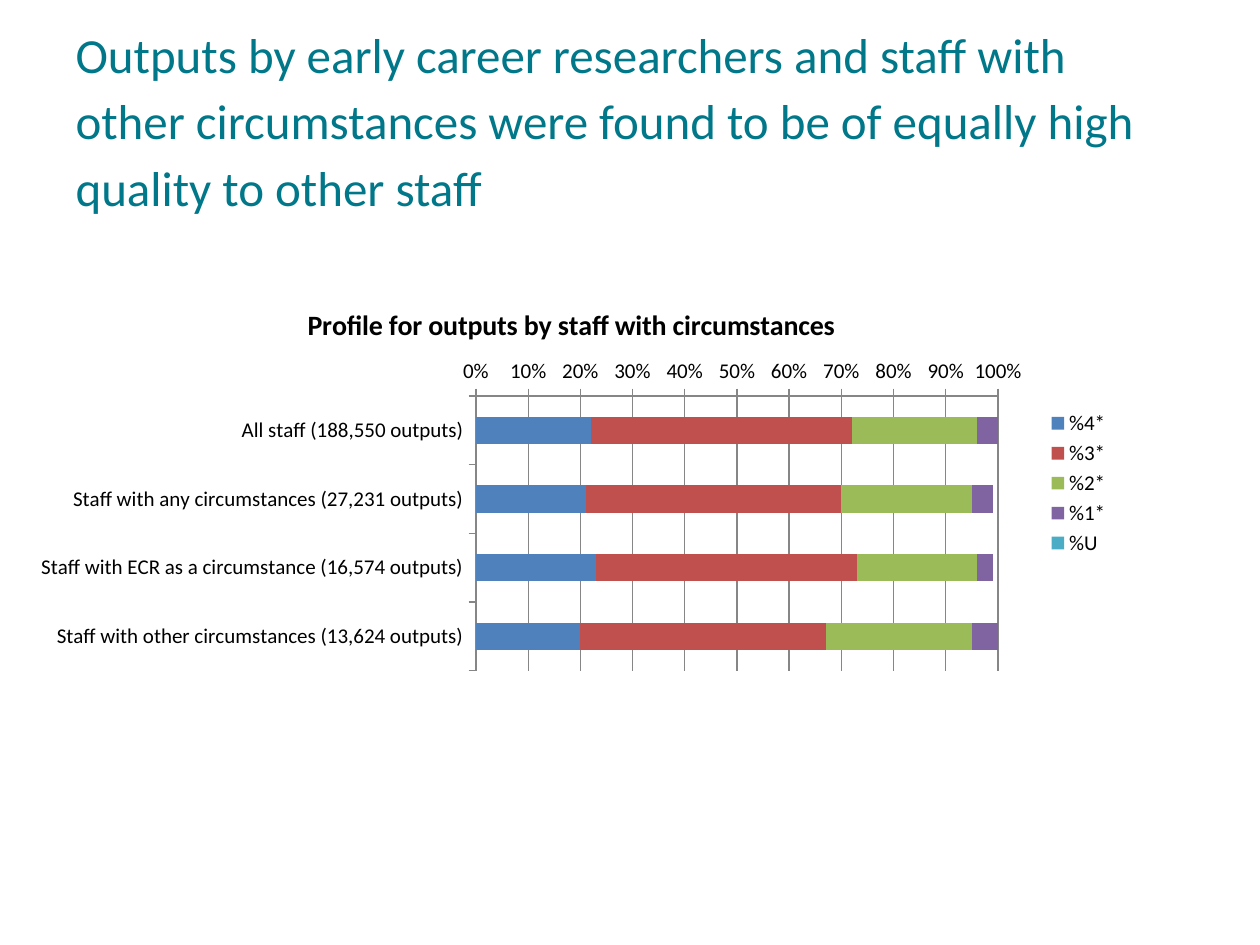
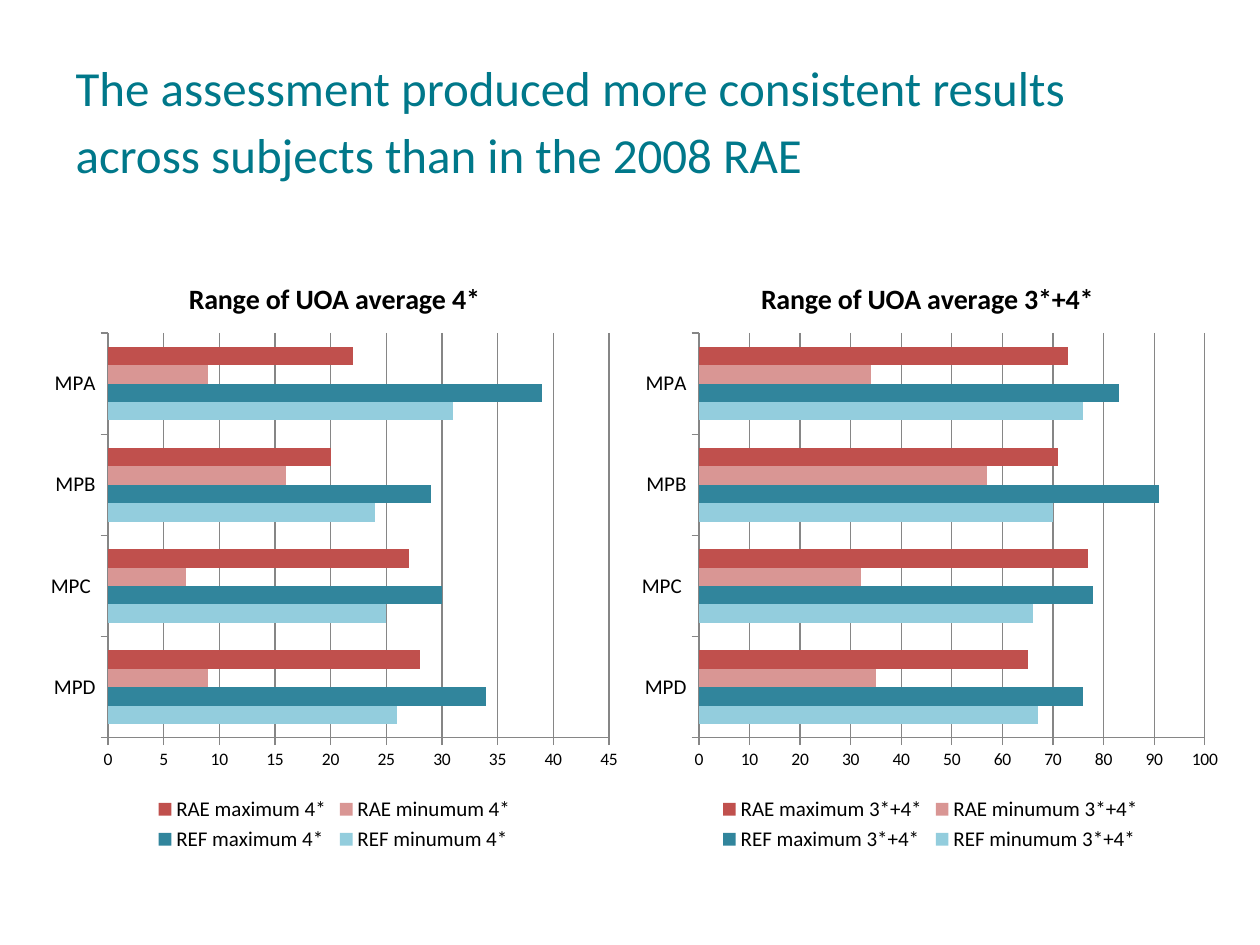
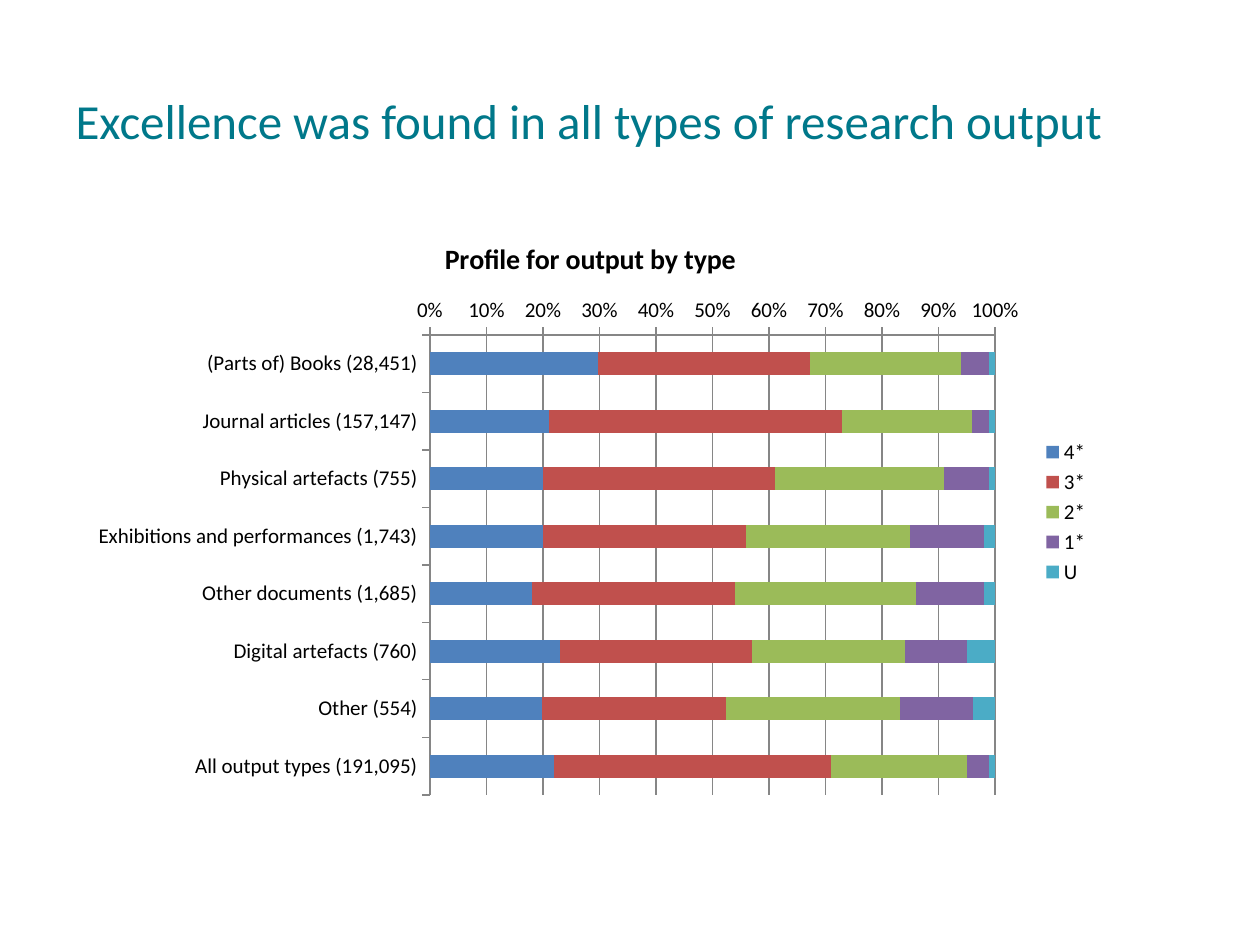
"""Build three slides of bar charts on research assessment results."""
from dataclasses import dataclass

from lxml.etree import SubElement
from pptx import Presentation
from pptx.chart.data import CategoryChartData
from pptx.dml.color import RGBColor
from pptx.enum.chart import XL_CHART_TYPE, XL_LEGEND_POSITION, XL_TICK_MARK
from pptx.enum.text import MSO_ANCHOR, PP_ALIGN
from pptx.oxml.ns import qn
from pptx.util import Pt


@dataclass(frozen=True)
class Theme:
    font: str = "Calibri"
    title_color: str = "00788A"
    text_color: str = "000000"
    line_color: str = "868686"
    profile_colors: tuple = ("4F81BD", "C0504D", "9BBB59", "8064A2", "4BACC6")
    range_colors: tuple = ("93CDDD", "31859C", "D99694", "C0504D")
    title_size: int = 28
    title_spacing: int = 38
    chart_title_size: int = 16
    label_size: int = 12
    small_size: int = 10


THEME = Theme()
SLIDE_SIZE = (720, 540)
TITLE_BOX = (36, 21.6, 648, 90)

PROFILE = dict(colors=THEME.profile_colors, legend=XL_LEGEND_POSITION.RIGHT,
               value_size=THEME.label_size, format="0%", reverse=True, overlap=100)
RANGE = dict(type=XL_CHART_TYPE.BAR_CLUSTERED, colors=THEME.range_colors,
             legend=XL_LEGEND_POSITION.BOTTOM, value_size=THEME.small_size,
             format="General", reverse=False, overlap=0,
             categories=["MPD", "MPC ", "MPB", "MPA"])

SLIDES = [
    ("Outputs by early career researchers and staff with other circumstances "
     "were found to be of equally high quality to other staff",
     [dict(PROFILE, type=XL_CHART_TYPE.BAR_STACKED, maximum=1,
           title="Profile for outputs by staff with circumstances",
           box=(11.5, 163.4, 630, 225.4), plot=(272, 226.3, 298.3, 157.1),
           categories=["All staff (188,550 outputs)",
                       "Staff with any circumstances (27,231 outputs)",
                       "Staff with ECR as a circumstance (16,574 outputs)",
                       "Staff with other circumstances (13,624 outputs)"],
           series={"%4*": (0.22, 0.21, 0.23, 0.2),
                   "%3*": (0.5, 0.49, 0.5, 0.47),
                   "%2*": (0.24, 0.25, 0.23, 0.28),
                   "%1*": (0.04, 0.04, 0.03, 0.05),
                   "%U": (0.01, 0, 0, 0.01)})]),
    ("The assessment produced more consistent results across subjects "
     "than in the 2008 RAE",
     [dict(RANGE, title="Range of UOA average 4*", maximum=45,
           box=(22.3, 146.2, 337.7, 343.4), plot=(61.7, 190.3, 286.3, 231.4),
           series={"REF minumum 4*": (26, 25, 24, 31),
                   "REF maximum 4*": (34, 30, 29, 39),
                   "RAE minumum 4*": (9, 7, 16, 9),
                   "RAE maximum 4*": (28, 27, 20, 22)}),
      dict(RANGE, title="Range of UOA average 3*+4* ", maximum=100,
           box=(360, 146.2, 343.4, 343.4), plot=(399.4, 190.3, 289.1, 231.4),
           series={"REF minumum 3*+4*": (67, 66, 70, 76),
                   "REF maximum 3*+4*": (76, 78, 91, 83),
                   "RAE minumum 3*+4*": (35, 32, 57, 34),
                   "RAE maximum 3*+4*": (65, 77, 71, 73)})]),
    ("Excellence was found in all types of research output",
     [dict(PROFILE, type=XL_CHART_TYPE.BAR_STACKED_100, maximum=None,
           title="Profile for output by type",
           box=(44.6, 123.8, 585.4, 337.7), plot=(245.7, 191.4, 322.9, 262.9),
           categories=["(Parts of) Books (28,451)", "Journal articles (157,147)",
                       "Physical artefacts (755)",
                       "Exhibitions and performances (1,743)",
                       "Other documents (1,685)", "Digital artefacts (760)",
                       "Other (554)", "All output types (191,095)"],
           series={"4*": (30, 21, 20, 20, 18, 23, 20, 22),
                   "3*": (38, 52, 41, 36, 36, 34, 33, 49),
                   "2*": (27, 23, 30, 29, 32, 27, 31, 24),
                   "1*": (5, 3, 8, 13, 12, 11, 13, 4),
                   "U": (1, 1, 1, 2, 2, 5, 4, 1)})]),
]


def style_font(font, size, color=THEME.text_color, bold=False):
    font.name, font.size, font.bold = THEME.font, Pt(size), bold
    font.color.rgb = RGBColor.from_string(color)


def style_line(line):
    line.color.rgb = RGBColor.from_string(THEME.line_color)
    line.width = Pt(0.75)


def add_title(slide, text):
    title = slide.shapes.title
    title.left, title.top, title.width, title.height = map(Pt, TITLE_BOX)
    title.text_frame.text = text
    title.text_frame.vertical_anchor = MSO_ANCHOR.MIDDLE
    paragraph = title.text_frame.paragraphs[0]
    paragraph.alignment = PP_ALIGN.LEFT
    paragraph.line_spacing = Pt(THEME.title_spacing)
    style_font(paragraph.font, THEME.title_size, THEME.title_color)


def place_plot(chart, box, plot):
    """Fix the inner plot area, given in slide points, inside the chart box."""
    plot_area = chart._chartSpace.chart.plotArea
    for layout in plot_area.findall(qn("c:layout")):
        plot_area.remove(layout)
    layout = SubElement(plot_area, qn("c:layout"))
    plot_area.insert(0, layout)
    manual = SubElement(layout, qn("c:manualLayout"))
    left, top, width, height = box
    settings = {"layoutTarget": "inner", "xMode": "edge", "yMode": "edge",
                "x": (plot[0] - left) / width, "y": (plot[1] - top) / height,
                "w": plot[2] / width, "h": plot[3] / height}
    for name, value in settings.items():
        SubElement(manual, qn(f"c:{name}")).set("val", str(value))


def style_axes(chart, content):
    category_axis, value_axis = chart.category_axis, chart.value_axis
    category_axis.reverse_order = content["reverse"]
    value_axis.has_major_gridlines = True
    style_line(value_axis.major_gridlines.format.line)
    value_axis.minimum_scale = 0
    value_axis.maximum_scale = content["maximum"]
    value_axis.tick_labels.number_format = content["format"]
    value_axis.tick_labels.number_format_is_linked = False
    for axis, size in ((category_axis, THEME.label_size),
                       (value_axis, content["value_size"])):
        axis.major_tick_mark = XL_TICK_MARK.OUTSIDE
        style_line(axis.format.line)
        style_font(axis.tick_labels.font, size)


def add_bar_chart(slide, content):
    data = CategoryChartData()
    data.categories = content["categories"]
    for name, values in content["series"].items():
        data.add_series(name, values)
    chart = slide.shapes.add_chart(content["type"], *map(Pt, content["box"]), data).chart
    style_font(chart.font, THEME.small_size)

    chart.has_title = True
    chart.chart_title.include_in_layout = False
    chart.chart_title.text_frame.text = content["title"]
    style_font(chart.chart_title.text_frame.paragraphs[0].font,
               THEME.chart_title_size, bold=True)

    chart.has_legend = True
    chart.legend.position = content["legend"]
    chart.legend.include_in_layout = False
    style_font(chart.legend.font, THEME.label_size)

    bars = chart.plots[0]
    bars.gap_width, bars.overlap = 150, content["overlap"]
    bars.vary_by_categories = False
    for series, color in zip(bars.series, content["colors"]):
        series.invert_if_negative = False
        series.format.fill.solid()
        series.format.fill.fore_color.rgb = RGBColor.from_string(color)

    style_axes(chart, content)
    place_plot(chart, content["box"], content["plot"])


def main():
    presentation = Presentation()
    presentation.slide_width, presentation.slide_height = map(Pt, SLIDE_SIZE)
    title_only = presentation.slide_layouts[5]
    for title, charts in SLIDES:
        slide = presentation.slides.add_slide(title_only)
        add_title(slide, title)
        for content in charts:
            add_bar_chart(slide, content)
    presentation.save("out.pptx")


if __name__ == "__main__":
    main()
